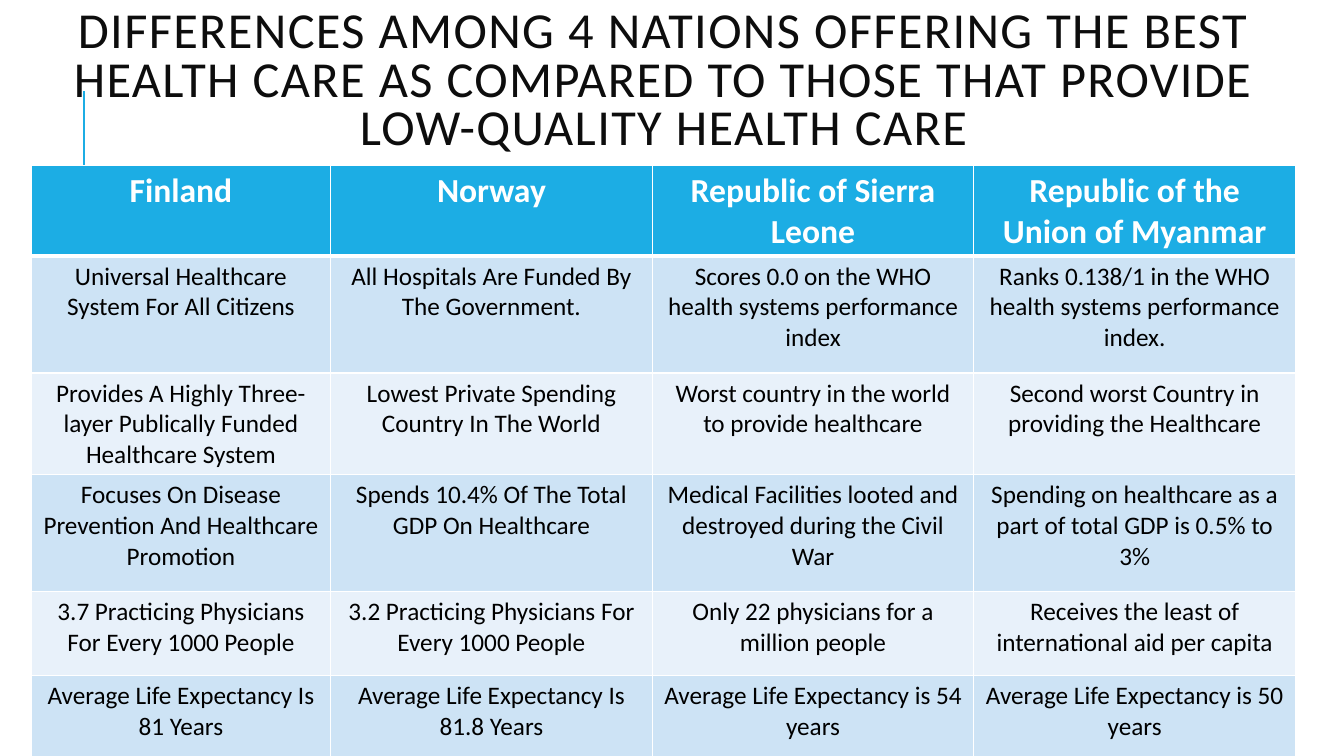
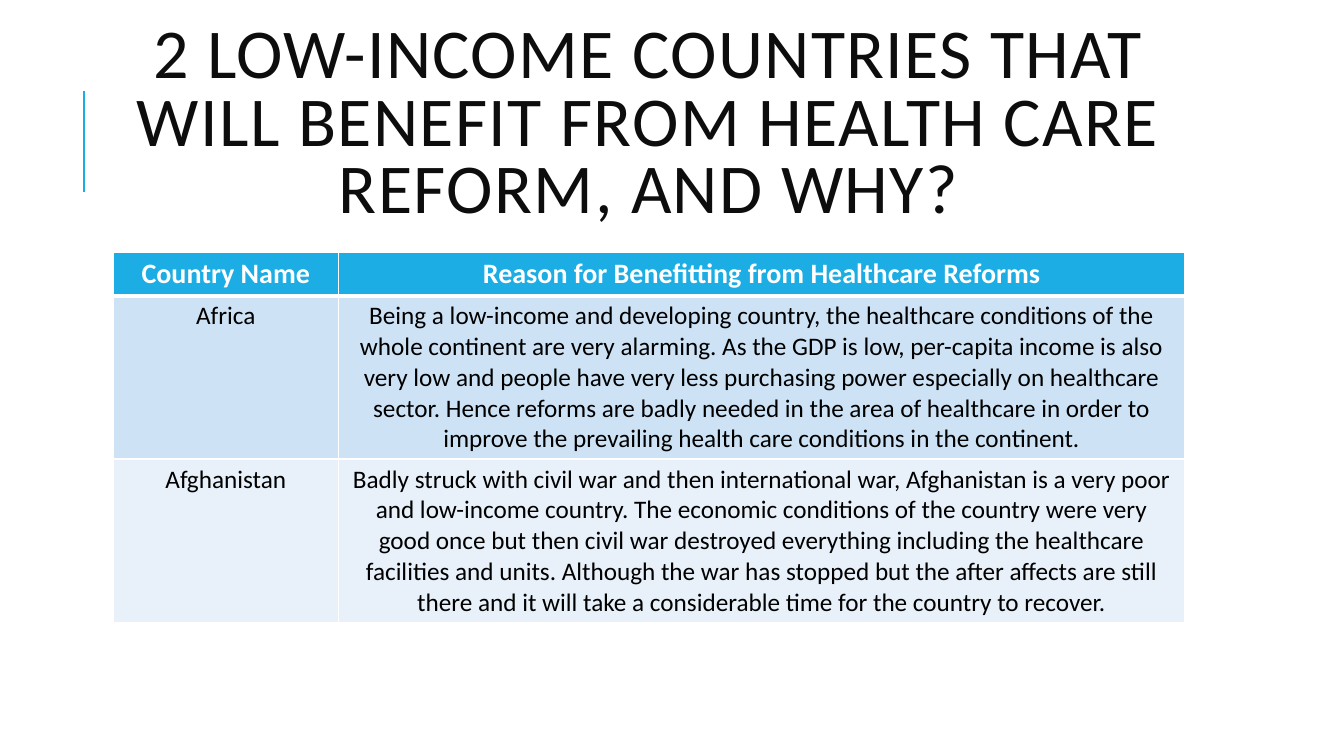
from lxml import etree
from pptx import Presentation
from pptx.dml.color import RGBColor
from pptx.enum.shapes import MSO_CONNECTOR
from pptx.enum.text import MSO_ANCHOR, PP_ALIGN
from pptx.oxml.ns import qn
from pptx.util import Inches, Pt

CENTER = PP_ALIGN.CENTER
MIDDLE = MSO_ANCHOR.MIDDLE
STRAIGHT = MSO_CONNECTOR.STRAIGHT

FONT = "Calibri"
COLORS = {
    "accent": "1CADE4",
    "title": "0D0D0D",
    "body": "000000",
    "white": "FFFFFF",
    "dark": "CDE3F5",
    "light": "E8F1FA",
}
BODY_SIZE = 18

NATIONS = [
    ["Finland", "Norway", "Republic of Sierra Leone",
     "Republic of the Union of Myanmar"],
    ["Universal Healthcare System For All Citizens",
     "All Hospitals Are Funded By The Government.",
     "Scores 0.0 on the WHO health systems performance index",
     "Ranks 0.138/1 in the WHO health systems performance index."],
    ["Provides A Highly Three-layer Publically Funded Healthcare System",
     "Lowest Private Spending Country In The World",
     "Worst country in the world to provide healthcare",
     "Second worst Country in providing the Healthcare"],
    ["Focuses On Disease Prevention And Healthcare Promotion",
     "Spends 10.4% Of The Total GDP On Healthcare",
     "Medical Facilities looted and destroyed during the Civil War",
     "Spending on healthcare as a part of total GDP is 0.5% to 3%"],
    ["3.7 Practicing Physicians For Every 1000 People",
     "3.2 Practicing Physicians For Every 1000 People",
     "Only 22 physicians for a million people",
     "Receives the least of international aid per capita"],
    ["Average Life Expectancy Is 81 Years",
     "Average Life Expectancy Is 81.8 Years",
     "Average Life Expectancy is 54 years",
     "Average Life Expectancy is 50 years"],
]

REASONS = [
    ["Country Name", "Reason for Benefitting from Healthcare Reforms"],
    ["Africa",
     "Being a low-income and developing country, the healthcare conditions "
     "of the whole continent are very alarming. As the GDP is low, per-capita "
     "income is also very low and people have very less purchasing power "
     "especially on healthcare sector. Hence reforms are badly needed in the "
     "area of healthcare in order to improve the prevailing health care "
     "conditions in the continent."],
    ["Afghanistan",
     "Badly struck with civil war and then international war, Afghanistan is "
     "a very poor and low-income country. The economic conditions of the "
     "country were very good once but then civil war destroyed everything "
     "including the healthcare facilities and units. Although the war has "
     "stopped but the after affects are still there and it will take a "
     "considerable time for the country to recover."],
]


def color(name):
    return RGBColor.from_string(COLORS[name])


def set_text(frame, text, size, shade, bold=False):
    """Write one centred paragraph and return it."""
    frame.text = text
    para = frame.paragraphs[0]
    para.alignment = CENTER
    font = para.runs[0].font
    font.name, font.size, font.bold = FONT, Pt(size), bold
    font.color.rgb = color(shade)
    return para


def add_rule(slide):
    """Draw the short accent line left of the title."""
    x = Inches(0.83)
    rule = slide.shapes.add_connector(
        STRAIGHT, x, Inches(1.9), x, Inches(0.9))
    rule.line.color.rgb = color("accent")
    rule.line.width = Pt(1.5)
    etree.SubElement(rule.element.spPr, qn("a:effectLst"))


def add_title(slide, text, left, top, width, size):
    box = slide.shapes.add_textbox(
        Inches(left), Inches(top), Inches(width), Inches(1.64))
    frame = box.text_frame
    frame.word_wrap = True
    frame.vertical_anchor = MIDDLE
    para = set_text(frame, text, size, "title")
    para.line_spacing = 0.8
    para.runs[0].font._element.set("spc", "100")


def set_borders(cell, top, bottom):
    """Give the cell white borders; top and bottom are widths in points."""
    props = cell._tc.get_or_add_tcPr()
    for side, width in (("L", 1), ("R", 1), ("T", top), ("B", bottom)):
        line = etree.SubElement(props, qn(f"a:ln{side}"), w=str(Pt(width)))
        fill = etree.SubElement(line, qn("a:solidFill"))
        etree.SubElement(fill, qn("a:srgbClr"), val=COLORS["white"])


def add_table(slide, data, left, top, widths, heights, head_size):
    table = slide.shapes.add_table(
        len(data), len(widths), Inches(left), Inches(top),
        Inches(sum(widths)), Inches(sum(heights))).table
    for col, width in zip(table.columns, widths):
        col.width = Inches(width)
    for i, (row, height, texts) in enumerate(zip(table.rows, heights, data)):
        row.height = Inches(height)
        head = i == 0
        band = "accent" if head else "dark" if i % 2 else "light"
        size, shade = (head_size, "white") if head else (BODY_SIZE, "body")
        for cell, text in zip(row.cells, texts):
            set_borders(cell, 3 if i == 1 else 1, 3 if head else 1)
            cell.fill.solid()
            cell.fill.fore_color.rgb = color(band)
            set_text(cell.text_frame, text, size, shade, head)


def add_slide(deck):
    slide = deck.slides.add_slide(deck.slide_layouts[6])
    add_rule(slide)
    return slide


def main():
    deck = Presentation()
    deck.slide_width, deck.slide_height = Inches(13.33), Inches(7.5)

    slide = add_slide(deck)
    add_title(slide, "DIFFERENCES AMONG 4 NATIONS OFFERING THE BEST HEALTH "
              "CARE AS COMPARED TO THOSE THAT PROVIDE LOW-QUALITY HEALTH CARE",
              0.31, 0, 12.55, 36)
    add_table(slide, NATIONS, 0.31, 1.64, [2.97] + [3.19] * 3,
              [0.9, 1.16, 1.01, 1.16, 0.83, 0.83], 24)

    slide = add_slide(deck)
    add_title(slide, "2 LOW-INCOME COUNTRIES THAT WILL BENEFIT FROM HEALTH "
              "CARE REFORM, AND WHY?", 1.12, 0.43, 10.63, 50)
    add_table(slide, REASONS, 1.12, 2.5, [2.24, 8.39], [0.43, 1.62, 1.62], 20)

    deck.save("out.pptx")


if __name__ == "__main__":
    main()
